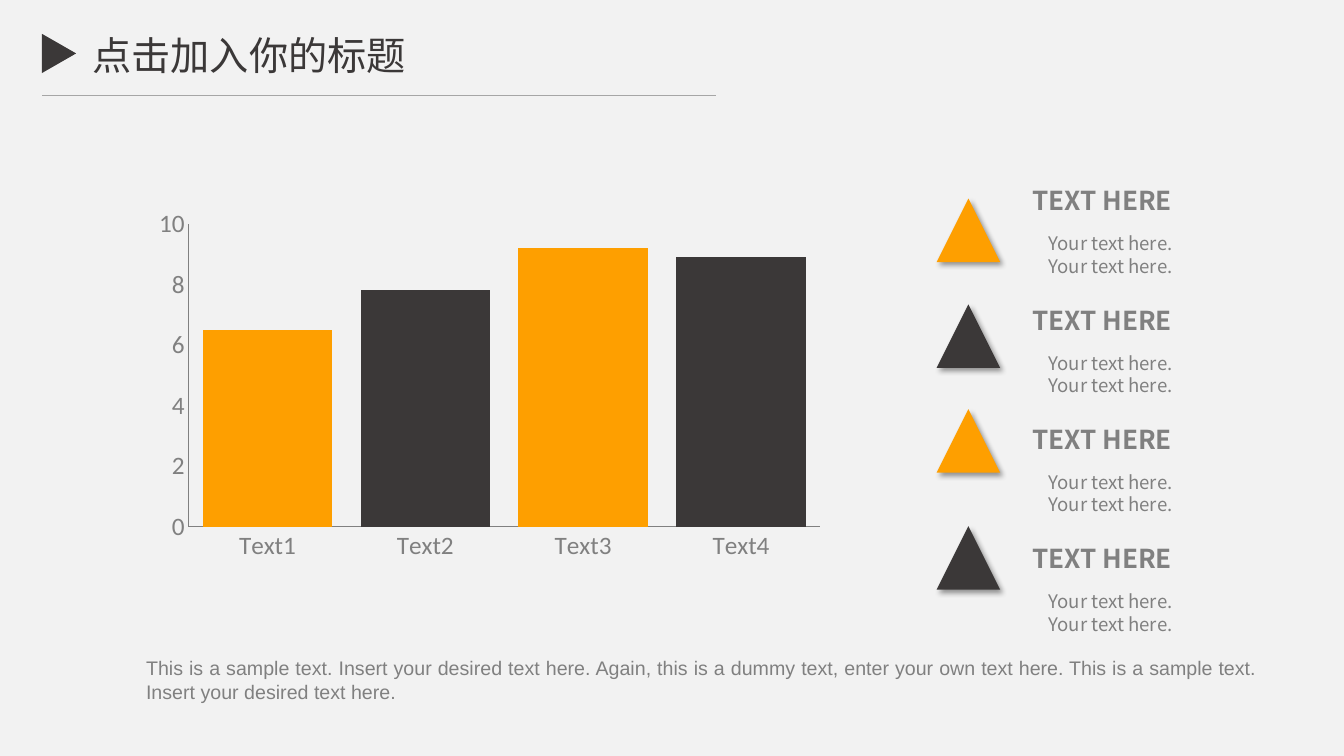
from lxml import etree
from pptx import Presentation
from pptx import util as u
from pptx.chart.data import CategoryChartData
from pptx.dml.color import RGBColor
from pptx.enum import chart as ch, shapes, text
from pptx.oxml import parse_xml
from pptx.oxml.ns import nsdecls, qn

ORANGE, DARK, GREY, RULE, PAPER = "FE9F00", "3B3838", "808080", "A6A6A6", "F2F2F2"
CJK = "Noto Sans CJK SC"


def color(code):
    return RGBColor.from_string(code)


class SlideBuilder:
    """Holds the shared style and the current slide."""

    line_ratio = 1.22
    accents = (ORANGE, DARK, ORANGE, DARK)

    def __init__(self, page):
        self.page = page
        page.background.fill.solid()
        page.background.fill.fore_color.rgb = color(PAPER)

    def text(self, left, top, width, height, lines, size, font=CJK, ink=GREY,
             bold=False, align=text.PP_ALIGN.LEFT, inset=(0.1, 0.05)):
        box = self.page.shapes.add_textbox(*map(u.Inches, (left, top, width, height)))
        frame = box.text_frame
        frame.word_wrap = True
        frame.margin_left = frame.margin_right = u.Inches(inset[0])
        frame.margin_top = frame.margin_bottom = u.Inches(inset[1])
        for index, line in enumerate(lines):
            para = frame.add_paragraph() if index else frame.paragraphs[0]
            para.alignment = align
            if font == CJK:
                para.line_spacing = u.Pt(round(size * self.line_ratio, 1))
            span = para.add_run()
            span.text = line
            span.font.name, span.font.size, span.font.bold = font, u.Pt(size), bold
            span.font.color.rgb = color(ink)
            east_asian = etree.SubElement(span.font._element, qn("a:ea"))
            east_asian.set("typeface", font)

    def triangle(self, left, top, width, height, fill, rotation=0, shadow=False):
        shape = self.page.shapes.add_shape(
            shapes.MSO_SHAPE.ISOSCELES_TRIANGLE,
            *map(u.Inches, (left, top, width, height)))
        shape.rotation = rotation
        shape.fill.solid()
        shape.fill.fore_color.rgb = color(fill)
        shape.line.fill.background()
        shape.shadow.inherit = False
        if shadow:
            effects = shape._element.spPr.find(qn("a:effectLst"))
            effects.append(parse_xml(
                f'<a:outerShdw {nsdecls("a")} blurRad="{u.Pt(4)}" dist="{u.Pt(3)}" '
                'dir="2700000" algn="tl" rotWithShape="0"><a:srgbClr val="000000">'
                '<a:alpha val="40000"/></a:srgbClr></a:outerShdw>'))

    def line(self, x1, y1, x2, y2, ink, weight):
        rule = self.page.shapes.add_connector(
            shapes.MSO_CONNECTOR.STRAIGHT, *map(u.Inches, (x1, y1, x2, y2)))
        rule.line.color.rgb = color(ink)
        rule.line.width = u.Pt(weight)
        etree.SubElement(rule._element.spPr, qn("a:effectLst"))

    def column_chart(self, left, top, width, height, names, values, plot_area):
        data = CategoryChartData()
        data.categories = names
        data.add_series("Series 1", values)
        chart = self.page.shapes.add_chart(
            ch.XL_CHART_TYPE.COLUMN_CLUSTERED,
            *map(u.Inches, (left, top, width, height)), data).chart
        chart.has_legend = chart.has_title = False
        chart.font.name, chart.font.size = "Calibri", u.Pt(18)
        chart.font.color.rgb = color(GREY)

        # Axes
        for axis in (chart.category_axis, chart.value_axis):
            axis.has_major_gridlines = False
            axis.major_tick_mark = axis.minor_tick_mark = ch.XL_TICK_MARK.NONE
            axis.format.line.color.rgb = color(GREY)
            axis.format.line.width = u.Pt(0.75)
        chart.value_axis.minimum_scale = 0
        chart.value_axis.maximum_scale = 10
        chart.value_axis.major_unit = 2

        # Columns
        plot = chart.plots[0]
        plot.gap_width, plot.overlap, plot.vary_by_categories = 22, -3, False
        series = plot.series[0]
        series.invert_if_negative = False
        for index, accent in enumerate(self.accents):
            fill = series.points[index].format.fill
            fill.solid()
            fill.fore_color.rgb = color(accent)

        # Inner plot area as fractions of the chart
        area = chart._chartSpace.chart.plotArea
        for old in area.findall(qn("c:layout")):
            area.remove(old)
        places = "".join(f'<c:{key} val="{share}"/>'
                         for key, share in zip("xywh", plot_area))
        area.insert(0, parse_xml(
            f'<c:layout {nsdecls("c")}><c:manualLayout><c:layoutTarget val="inner"/>'
            '<c:xMode val="edge"/><c:yMode val="edge"/>'
            f'{places}</c:manualLayout></c:layout>'))


def main():
    deck = Presentation()
    deck.slide_width, deck.slide_height = u.Inches(13.33), u.Inches(7.5)
    slide = SlideBuilder(deck.slides.add_slide(deck.slide_layouts[6]))

    # Heading
    slide.text(0.59, 0.3, 3.76, 0.47, ["点击加入你的标题"], 28, ink=DARK,
               align=text.PP_ALIGN.CENTER, inset=(0, 0))
    slide.triangle(0.39, 0.36, 0.39, 0.34, DARK, rotation=90)
    slide.line(0.42, 0.95, 7.1, 0.95, RULE, 0.5)

    # Chart
    slide.column_chart(1.42, 2.07, 6.72, 3.99,
                       ["Text1", "Text2", "Text3", "Text4"], [6.5, 7.8, 9.2, 8.9],
                       (0.067, 0.033, 0.932, 0.757))

    # Key points
    first_row, last_row = 1.78, 5.33
    marker_tops = (1.97, 3.02, 4.06, 5.22)
    row_pitch = (last_row - first_row) / (len(marker_tops) - 1)
    for row, (marker_top, accent) in enumerate(zip(marker_tops, slide.accents)):
        top = first_row + row * row_pitch
        slide.triangle(9.29, marker_top, 0.63, 0.63, accent, shadow=True)
        slide.text(10.3, top + 0.47, 2.41, 0.55, ["Your text here."] * 2, 13.3)
        slide.text(10.14, top, 2.41, 0.42, ["TEXT HERE"], 18.6, bold=True)

    # Footer paragraph
    slide.text(1.35, 6.51, 11.22, 0.99,
               ["This is a sample text. Insert your desired text here. Again, this is "
                "a dummy text, enter your own text here. This is a sample text. "
                "Insert your desired text here."],
               14, font="Arial", align=text.PP_ALIGN.JUSTIFY, inset=(0.1, 0))

    deck.save("out.pptx")


if __name__ == "__main__":
    main()
